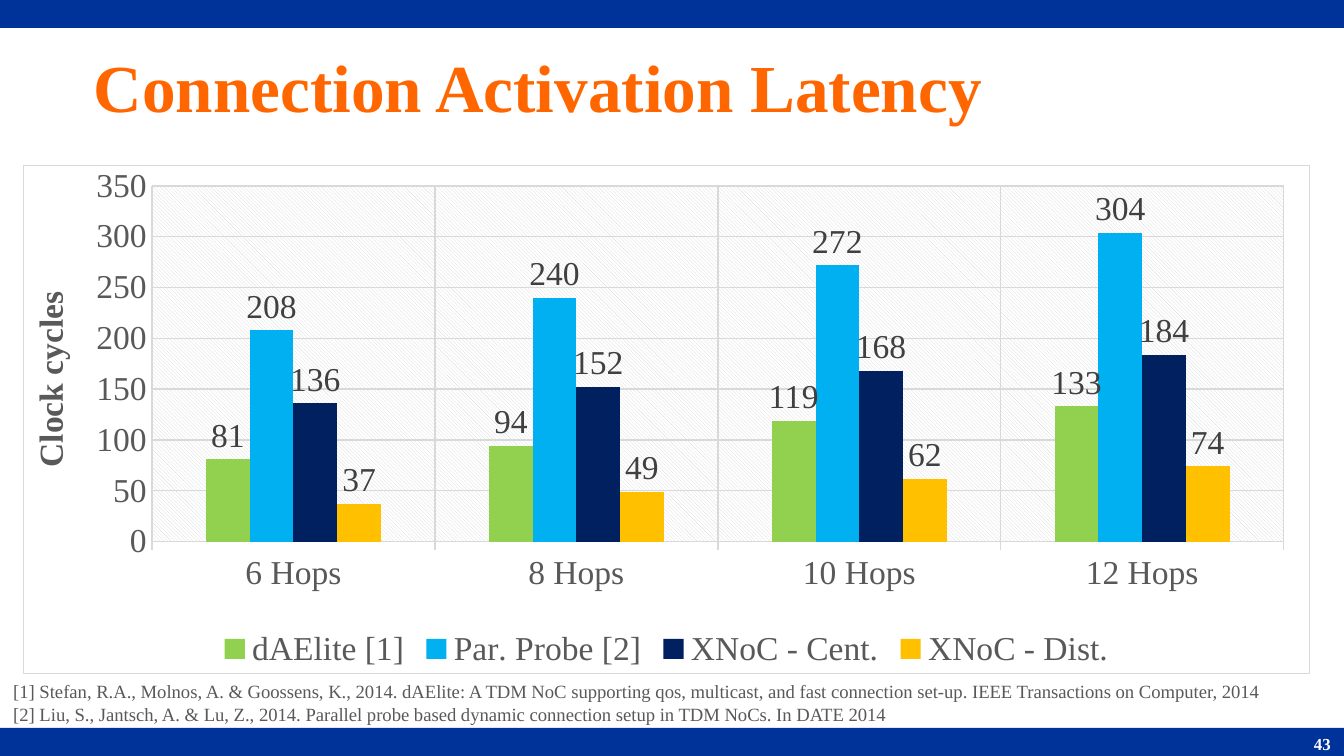
from dataclasses import dataclass

from pptx import Presentation
from pptx.chart.data import CategoryChartData
from pptx.dml.color import RGBColor
from pptx.enum.chart import XL_CHART_TYPE as ChartType
from pptx.enum.chart import XL_LABEL_POSITION as LabelPosition
from pptx.enum.chart import XL_LEGEND_POSITION as LegendPosition
from pptx.enum.chart import XL_TICK_MARK as TickMark
from pptx.enum.shapes import MSO_SHAPE as ShapeKind
from pptx.enum.text import MSO_ANCHOR as Anchor
from pptx.enum.text import MSO_AUTO_SIZE as AutoSize
from pptx.enum.text import PP_ALIGN as Align
from pptx.oxml import parse_xml
from pptx.oxml.ns import nsdecls, qn
from pptx.util import Cm, Pt


@dataclass(frozen=True)
class Theme:
    font: str = "Times New Roman"
    band: str = "003399"
    title: str = "FF6600"
    text: str = "595959"
    label: str = "404040"
    grid: str = "D9D9D9"
    white: str = "FFFFFF"
    title_size: int = 36
    chart_size: int = 18
    reference_size: int = 10
    number_size: int = 9


theme = Theme()


def set_font(font, size, color, bold=False):
    font.name = theme.font
    font.size = Pt(size)
    font.bold = bold
    font.color.rgb = RGBColor.from_string(color)


def write_text(frame, text, size, color, bold=False, align=Align.LEFT, anchor=Anchor.TOP):
    frame.word_wrap = True
    frame.auto_size = AutoSize.NONE
    frame.vertical_anchor = anchor
    frame.text = text
    for paragraph in frame.paragraphs:
        paragraph.alignment = align
        for run in paragraph.runs:
            set_font(run.font, size, color, bold)


presentation = Presentation()
presentation.slide_width = Cm(25.4)
presentation.slide_height = Cm(14.29)
slide = presentation.slides.add_slide(presentation.slide_layouts[5])

band_height = Cm(0.53)
for top in (0, presentation.slide_height - band_height):
    band = slide.shapes.add_shape(ShapeKind.RECTANGLE, 0, top, presentation.slide_width, band_height)
    band.shadow.inherit = False
    band.fill.solid()
    band.fill.fore_color.rgb = RGBColor.from_string(theme.band)
    band.line.fill.background()

title = slide.shapes.title
title.left, title.top, title.width, title.height = Cm(1.52), Cm(0.53), Cm(20.47), Cm(2.16)
write_text(title.text_frame, "Connection Activation Latency", size=theme.title_size,
           color=theme.title, bold=True, anchor=Anchor.MIDDLE)

number = slide.shapes.add_textbox(Cm(20.12), Cm(13.82), Cm(5.28), Cm(0.48))
write_text(number.text_frame, "43", size=theme.number_size, color=theme.white,
           bold=True, align=Align.RIGHT, anchor=Anchor.MIDDLE)

series_data = [
    ("dAElite [1]", (81, 94, 119, 133), "92D050"),
    ("Par. Probe [2]", (208, 240, 272, 304), "00B0F0"),
    ("XNoC - Cent.", (136, 152, 168, 184), "002060"),
    ("XNoC - Dist.", (37, 49, 62, 74), "FFC000"),
]
chart_data = CategoryChartData()
chart_data.categories = [f"{hops} Hops" for hops in (6, 8, 10, 12)]
for name, values, color in series_data:
    chart_data.add_series(name, values)

chart = slide.shapes.add_chart(ChartType.COLUMN_CLUSTERED, Cm(0.43), Cm(3.12),
                               Cm(24.33), Cm(9.63), chart_data).chart
set_font(chart.font, theme.chart_size, theme.text)
chart.has_title = False
chart.has_legend = True
chart.legend.position = LegendPosition.BOTTOM
chart.legend.include_in_layout = False
set_font(chart.legend.font, theme.chart_size, theme.text)

plot = chart.plots[0]
plot.gap_width = 247
plot.overlap = 0
plot.vary_by_categories = False
for series, (name, values, color) in zip(plot.series, series_data):
    series.format.fill.solid()
    series.format.fill.fore_color.rgb = RGBColor.from_string(color)
    labels = series.data_labels
    labels.show_value = True
    labels.position = LabelPosition.OUTSIDE_END
    set_font(labels.font, theme.chart_size, theme.label)

category_axis, value_axis = chart.category_axis, chart.value_axis
for axis in (category_axis, value_axis):
    axis.has_major_gridlines = True
    axis.minor_tick_mark = TickMark.NONE
    set_font(axis.tick_labels.font, theme.chart_size, theme.text)
for line in (category_axis.format.line, category_axis.major_gridlines.format.line,
             value_axis.major_gridlines.format.line):
    line.color.rgb = RGBColor.from_string(theme.grid)
    line.width = Pt(0.75)
category_axis.major_tick_mark = TickMark.OUTSIDE
value_axis.major_tick_mark = TickMark.NONE
value_axis.format.line.fill.background()
value_axis.minimum_scale = 0
value_axis.maximum_scale = 350
value_axis.major_unit = 50

axis_frame = value_axis.axis_title.text_frame
axis_frame.text = "Clock cycles"
set_font(axis_frame.paragraphs[0].runs[0].font, theme.chart_size, theme.text, bold=True)
body = value_axis.axis_title.element.find(".//" + qn("a:bodyPr"))
body.set("rot", "-5400000")
body.set("vert", "horz")

chart.element.find(qn("c:chart")).addnext(parse_xml(
    f'<c:spPr {nsdecls("c", "a")}><a:solidFill><a:srgbClr val="{theme.white}"/></a:solidFill>'
    f'<a:ln w="9525"><a:solidFill><a:srgbClr val="{theme.grid}"/></a:solidFill></a:ln></c:spPr>'))
plot_area = chart.element.find(".//" + qn("c:plotArea"))
for layout in plot_area.findall(qn("c:layout")):
    plot_area.remove(layout)
edges = "".join(f'<c:{edge}Mode val="edge"/>' for edge in "xy")
sizes = "".join(f'<c:{key} val="{value}"/>'
                for key, value in (("x", 0.1), ("y", 0.04), ("w", 0.88), ("h", 0.7)))
plot_area.insert(0, parse_xml(
    f'<c:layout {nsdecls("c")}><c:manualLayout><c:layoutTarget val="inner"/>'
    f'{edges}{sizes}</c:manualLayout></c:layout>'))
plot_area.append(parse_xml(
    f'<c:spPr {nsdecls("c", "a")}><a:pattFill prst="ltDnDiag">'
    f'<a:fgClr><a:srgbClr val="{theme.grid}"/></a:fgClr>'
    f'<a:bgClr><a:srgbClr val="{theme.white}"/></a:bgClr></a:pattFill></c:spPr>'))

references = slide.shapes.add_textbox(0, Cm(12.73), Cm(25.4), Cm(1.12))
write_text(references.text_frame, "\n".join([
    "[1] Stefan, R.A., Molnos, A. & Goossens, K., 2014. dAElite: A TDM NoC supporting qos, "
    "multicast, and fast connection set-up. IEEE Transactions on Computer, 2014",
    "[2] Liu, S., Jantsch, A. & Lu, Z., 2014. Parallel probe based dynamic connection setup "
    "in TDM NoCs. In DATE 2014",
]), size=theme.reference_size, color=theme.text)

presentation.save("out.pptx")
